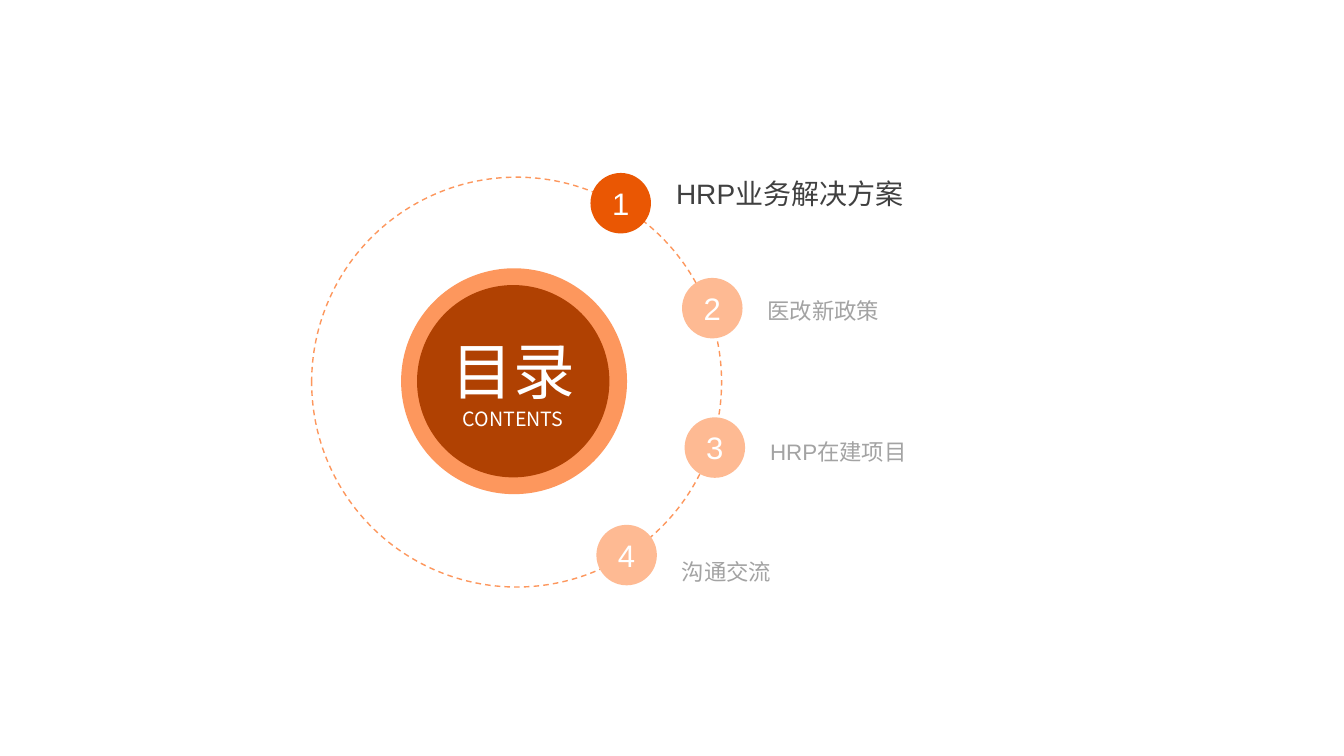
from dataclasses import dataclass

from lxml import etree
from pptx import Presentation
from pptx.dml.color import RGBColor
from pptx.enum.dml import MSO_LINE
from pptx.enum.shapes import MSO_SHAPE
from pptx.enum.text import MSO_ANCHOR, MSO_AUTO_SIZE, PP_ALIGN
from pptx.oxml.ns import qn
from pptx.util import Inches, Pt

OVAL = MSO_SHAPE.OVAL
DASH = MSO_LINE.DASH
MIDDLE = MSO_ANCHOR.MIDDLE
FIXED = MSO_AUTO_SIZE.NONE
LEFT, CENTER = PP_ALIGN.LEFT, PP_ALIGN.CENTER
TITLE_ONLY = 5
COLUMNS = 160  # 160 columns by 90 rows gives square cells


@dataclass(frozen=True)
class Theme:
    latin: str = "Arial"
    asian: str = "Noto Sans CJK SC"
    white: str = "FFFFFF"
    core: str = "B04102"
    halo: str = "FD975D"
    active: str = "EA5703"
    muted: str = "FEBA93"
    dark_text: str = "404040"
    muted_text: str = "A3A3A3"
    title_size: float = 44
    subtitle_size: float = 14
    number_size: float = 22.2
    active_size: float = 20
    item_size: float = 16


class ContentsPage:
    def __init__(self, deck, theme):
        self.theme = theme
        self.cell = deck.slide_width / COLUMNS
        self.page = deck.slides.add_slide(deck.slide_layouts[TITLE_ONLY])

    def area(self, left, top, width, height):
        return [round(value * self.cell) for value in (left, top, width, height)]

    def circle(self, center, diameter, fill=None, line=None):
        x, y = center
        corner = x - diameter / 2, y - diameter / 2
        shape = self.page.shapes.add_shape(OVAL, *self.area(*corner, diameter, diameter))
        shape.shadow.inherit = False
        if fill:
            shape.fill.solid()
            shape.fill.fore_color.rgb = RGBColor.from_string(fill)
        else:
            shape.fill.background()
        if line:
            shape.line.color.rgb = RGBColor.from_string(line)
            shape.line.width = Pt(1)
            shape.line.dash_style = DASH
        else:
            shape.line.fill.background()
        return shape

    def set_text(self, shape, lines, color, font, align=CENTER, spacing=1.0, inset=0):
        frame = shape.text_frame
        settings = {"word_wrap": True, "auto_size": FIXED, "vertical_anchor": MIDDLE,
                    "margin_left": Inches(inset), "margin_right": 0,
                    "margin_top": 0, "margin_bottom": 0}
        for name, value in settings.items():
            setattr(frame, name, value)
        for index, (text, size) in enumerate(lines):
            para = frame.add_paragraph() if index else frame.paragraphs[0]
            para.alignment, para.line_spacing = align, spacing
            span = para.add_run()
            span.text = text
            for name, value in {"name": font, "size": Pt(size), "bold": False}.items():
                setattr(span.font, name, value)
            span.font.color.rgb = RGBColor.from_string(color)
            asian = etree.SubElement(span.font._element, qn("a:ea"))
            asian.set("typeface", self.theme.asian)

    def title(self, center, diameter, lines):
        x, y = center
        shape = self.page.shapes.title
        places = self.area(x - diameter / 2, y - diameter / 2, diameter, diameter)
        for name, value in zip(("left", "top", "width", "height"), places):
            setattr(shape, name, value)
        self.set_text(shape, lines, self.theme.white, self.theme.asian)
        # Bring the title in front of the disc
        shape.element.getparent().append(shape.element)

    def label(self, left, middle, width, text, size, color):
        height = 10
        box = self.page.shapes.add_textbox(*self.area(left, middle - height / 2, width, height))
        self.set_text(box, [(text, size)], color, self.theme.latin, LEFT, 1.2, 0.04)

    def item(self, number, center, label_middle, label_width, text, active):
        theme = self.theme
        fill = theme.active if active else theme.muted
        size = theme.active_size if active else theme.item_size
        color = theme.dark_text if active else theme.muted_text
        badge = self.circle(center, 7.2, fill)
        self.set_text(badge, [(str(number), theme.number_size)], theme.white, theme.latin)
        self.label(center[0] + 6.1, label_middle, label_width, text, size, color)


def main():
    deck = Presentation()
    deck.slide_width, deck.slide_height = Inches(13.33), Inches(7.5)
    theme = Theme()
    contents = ContentsPage(deck, theme)

    # Central disc, halo and dashed orbit
    core_center, core_diameter = (61.1, 45.4), 22.9
    contents.circle((61.2, 45.4), 26.9, fill=theme.halo)
    contents.circle((61.5, 45.5), 48.8, line=theme.halo)
    contents.circle(core_center, core_diameter, fill=theme.core)
    contents.title(core_center, core_diameter,
                   [("目录", theme.title_size), ("CONTENTS", theme.subtitle_size)])

    # Agenda: badge centre, label middle, label width, wording
    agenda = [
        ((73.9, 24.2), 22.6, 47, "HRP业务解决方案"),
        ((84.8, 36.7), 36.7, 39, "医改新政策"),
        ((85.1, 53.3), 53.5, 39.6, "HRP在建项目"),
        ((74.6, 66.1), 67.7, 48.4, "沟通交流"),
    ]
    current = 1
    for number, (center, middle, width, text) in enumerate(agenda, 1):
        contents.item(number, center, middle, width, text, number == current)

    deck.save("out.pptx")


if __name__ == "__main__":
    main()
